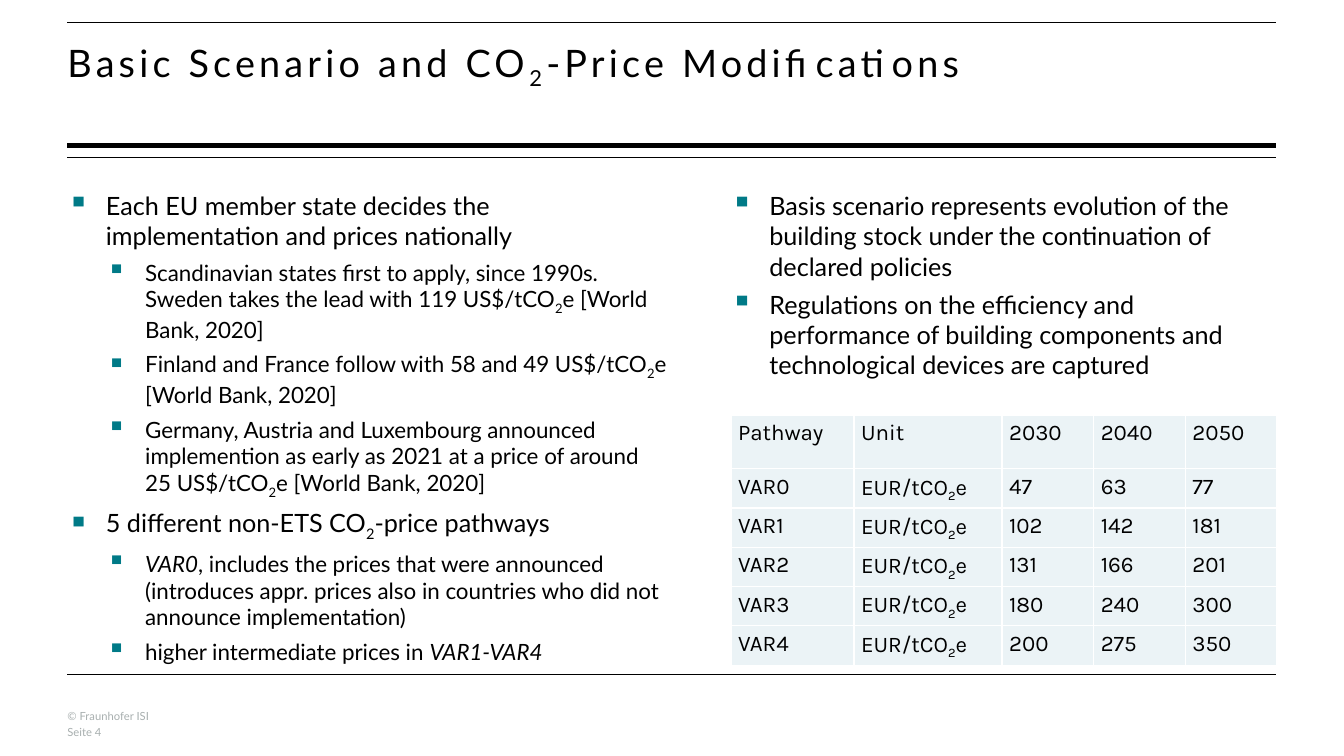
"""Build the slide on the basic scenario and its carbon price pathways."""
from dataclasses import dataclass
from typing import Any

import pptx
import pptx.dml.color
import pptx.enum.shapes
import pptx.enum.text
import pptx.oxml.ns
import pptx.util
from lxml import etree

Cm = pptx.util.Cm
Pt = pptx.util.Pt
LEFT, RIGHT, MID = 1.7, 32.16, 18.42
BLACK, GREY, TEAL, PALE, WHITE = "000000", "A8AFAF", "007A87", "EBF3F6", "FFFFFF"


@dataclass
class Rule:
    top: float
    width: float


@dataclass
class Item:
    text: str
    level: int = 0


@dataclass
class Box:
    left: float
    top: float
    width: float
    height: float


RULES = [Rule(0.56, 0.4), Rule(3.66, 3.57), Rule(3.96, 0.4), Rule(16.99, 0.4)]
TITLE = "Basic Scenario and CO|2|-Price Modifications"
STATES = [
    Item("Each EU member state decides the implementation and prices nationally"),
    Item("Scandinavian states first to apply, since 1990s. Sweden takes the lead "
         "with 119 US$/tCO|2|e [World Bank, 2020]", 1),
    Item("Finland and France follow with 58 and 49 US$/tCO|2|e [World Bank, 2020]", 1),
    Item("Germany, Austria and Luxembourg announced implemention as early as 2021 "
         "at a price of around 25 US$/tCO|2|e [World Bank, 2020]", 1),
    Item("5 different non-ETS CO|2|-price pathways"),
    Item("*VAR0|, includes the prices that were announced (introduces appr. prices "
         "also in countries who did not announce implementation)", 1),
    Item("higher intermediate prices in |*VAR1-VAR4", 1),
]
BASIS = [
    Item("Basis scenario represents evolution of the building stock under the "
         "continuation of declared policies"),
    Item("Regulations on the efficiency and performance of building components "
         "and technological devices are captured"),
]
FOOTER = ["© Fraunhofer ISI", "Seite 4"]
HEADS = ["Pathway", "Unit", "2030", "2040", "2050"]
PRICES = [(47, 63, 77), (102, 142, 181), (131, 166, 201), (180, 240, 300), (200, 275, 350)]
WIDTHS = [3.1, 3.73, 2.31, 2.31, 2.31]
HEAD_ROW, ROW = 1.35, 0.99


def color(code: str) -> Any:
    return pptx.dml.color.RGBColor.from_string(code)


def add_xml(parent: Any, tag: str, **attrs: str) -> Any:
    return etree.SubElement(parent, pptx.oxml.ns.qn(tag), attrs)


def write(para: Any, text: str, size: float, name: str = "Lato",
          code: str = BLACK, track: int = 0) -> None:
    font = para.font
    font.size, font.name = Pt(size), name
    font.color.rgb = color(code)
    for part in text.split("|"):
        run = para.add_run()
        run.text = part.lstrip("*")
        props = run._r.get_or_add_rPr()
        if part == "2":
            props.set("baseline", "-25000")
        if part.startswith("*"):
            run.font.italic = True
        if track:
            props.set("spc", str(track))


def clear(frame: Any) -> None:
    frame.margin_left = frame.margin_right = 0
    frame.margin_top = frame.margin_bottom = 0
    frame.word_wrap = True
    frame.auto_size = pptx.enum.text.MSO_AUTO_SIZE.NONE
    frame.vertical_anchor = pptx.enum.text.MSO_ANCHOR.TOP


def place(shape: Any, box: Box) -> None:
    shape.left, shape.top = Cm(box.left), Cm(box.top)
    shape.width, shape.height = Cm(box.width), Cm(box.height)


def add_box(slide: Any, box: Box) -> Any:
    shape = slide.shapes.add_textbox(0, 0, 0, 0)
    place(shape, box)
    clear(shape.text_frame)
    return shape.text_frame


def add_rule(slide: Any, rule: Rule) -> None:
    kind = pptx.enum.shapes.MSO_CONNECTOR.STRAIGHT
    line = slide.shapes.add_connector(kind, Cm(LEFT), Cm(rule.top), Cm(RIGHT), Cm(rule.top))
    line.line.width = Pt(rule.width)
    line.line.color.rgb = color(BLACK)
    add_xml(line._element.spPr, "a:effectLst")


def add_list(slide: Any, box: Box, items: list[Item]) -> None:
    frame = add_box(slide, box)
    for rank, item in enumerate(items):
        para = frame.add_paragraph() if rank else frame.paragraphs[0]
        para.level = item.level
        props = para._p.get_or_add_pPr()
        props.set("marL", str(Cm(0.97 + 0.99 * item.level)))
        props.set("indent", str(Cm(-0.97)))
        add_xml(add_xml(props, "a:buClr"), "a:srgbClr", val=TEAL)
        add_xml(props, "a:buSzPct", val="120000")
        add_xml(props, "a:buChar", char="▪")
        para.space_after = Pt(5.5)
        write(para, item.text, 16 if item.level else 18)


def fill_cell(cell: Any, text: str) -> None:
    cell.margin_left = cell.margin_right = Cm(0.18)
    cell.margin_top = cell.margin_bottom = 0
    props = cell._tc.get_or_add_tcPr()
    for side in ("a:lnL", "a:lnR", "a:lnT", "a:lnB"):
        edge = add_xml(props, side, w=str(Pt(1)))
        add_xml(add_xml(edge, "a:solidFill"), "a:srgbClr", val=WHITE)
    cell.fill.solid()
    cell.fill.fore_color.rgb = color(PALE)
    para = cell.text_frame.paragraphs[0]
    para.alignment = pptx.enum.text.PP_ALIGN.JUSTIFY
    para.line_spacing = 1.2
    para.space_after = Pt(6)
    write(para, text, 16, "Karla")


def add_grid(slide: Any) -> None:
    rows = [HEADS]
    for rank, prices in enumerate(PRICES):
        rows.append([f"VAR{rank}", "EUR/tCO|2|e", *map(str, prices)])
    high = HEAD_ROW + ROW * len(PRICES)
    table = slide.shapes.add_table(len(rows), len(HEADS), Cm(MID), Cm(10.46),
                                   Cm(sum(WIDTHS)), Cm(high)).table
    table.first_row = table.horz_banding = False
    for col, width in zip(table.columns, WIDTHS):
        col.width = Cm(width)
    for y, texts in enumerate(rows):
        table.rows[y].height = Cm(ROW if y else HEAD_ROW)
        for x, text in enumerate(texts):
            fill_cell(table.cell(y, x), text)


def main() -> None:
    deck = pptx.Presentation()
    deck.slide_width, deck.slide_height = Cm(33.87), Cm(19.05)
    slide = deck.slides.add_slide(deck.slide_layouts[5])
    for rule in RULES:
        add_rule(slide, rule)
    title = slide.shapes.title
    place(title, Box(LEFT, 0.99, RIGHT - LEFT, 2.54))
    clear(title.text_frame)
    head = title.text_frame.paragraphs[0]
    head.alignment = pptx.enum.text.PP_ALIGN.LEFT
    write(head, TITLE, 27, track=300)
    add_list(slide, Box(LEFT, 4.8, 15.16, 11.96), STATES)
    add_list(slide, Box(MID, 4.8, RIGHT - MID, 5.2), BASIS)
    add_grid(slide)
    for rank, text in enumerate(FOOTER):
        frame = add_box(slide, Box(LEFT, 17.88 + 0.41 * rank, 6.65, 0.33))
        write(frame.paragraphs[0], text, 8, code=GREY)
    deck.save("out.pptx")


if __name__ == "__main__":
    main()
